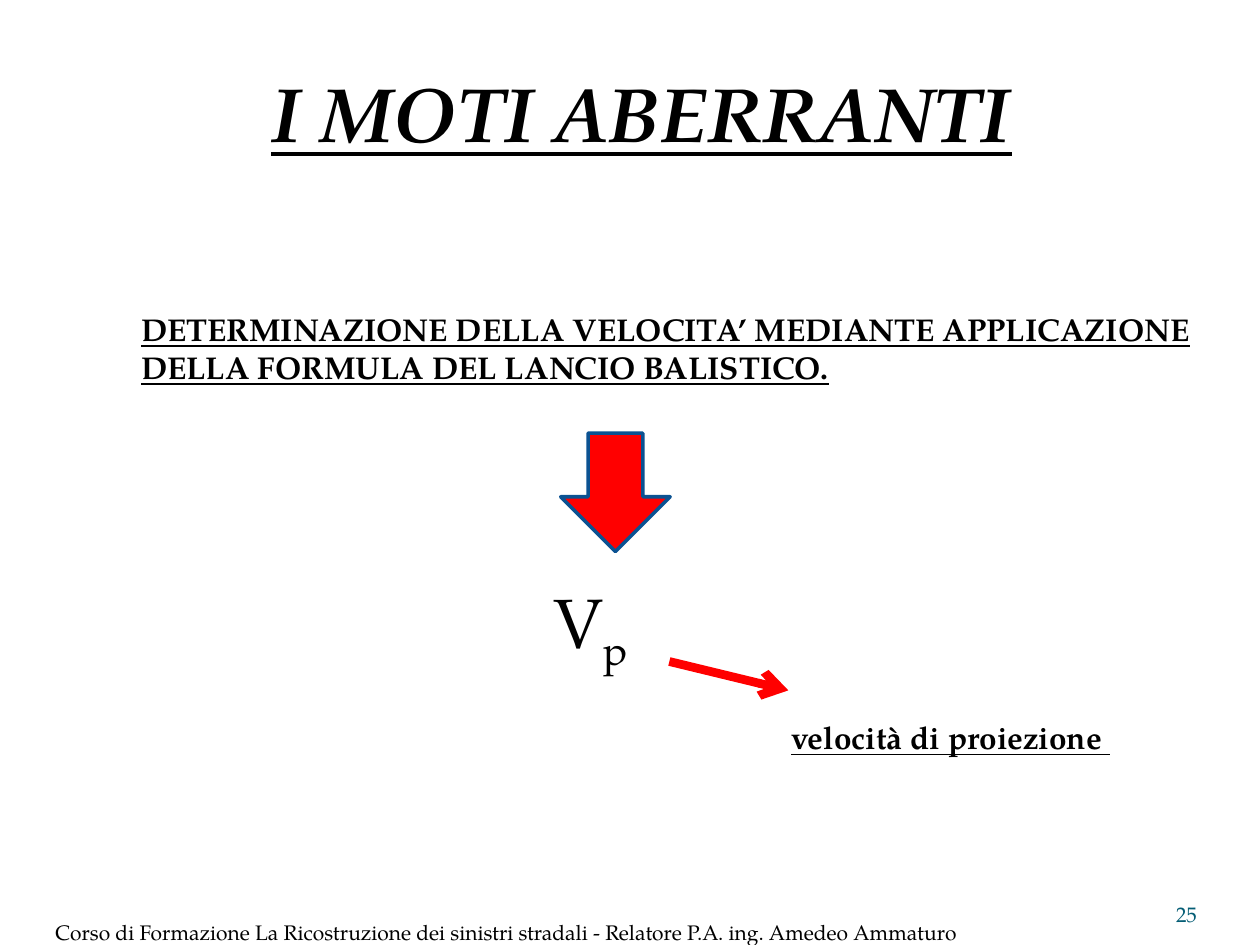
from dataclasses import dataclass

from lxml import etree
from pptx import Presentation
from pptx.dml.color import RGBColor
from pptx.enum.shapes import MSO_CONNECTOR, MSO_SHAPE
from pptx.enum.text import MSO_ANCHOR, MSO_AUTO_SIZE, PP_ALIGN
from pptx.oxml.ns import qn
from pptx.util import Pt

LEFT, CENTER, RIGHT = PP_ALIGN.LEFT, PP_ALIGN.CENTER, PP_ALIGN.RIGHT
TOP, BOTTOM = MSO_ANCHOR.TOP, MSO_ANCHOR.BOTTOM
TITLE_ONLY = 5


@dataclass(frozen=True)
class Theme:
    font: str = "TeX Gyre Pagella"
    black: RGBColor = RGBColor(0x00, 0x00, 0x00)
    red: RGBColor = RGBColor(0xFF, 0x00, 0x00)
    outline: RGBColor = RGBColor(0x0B, 0x52, 0x92)
    number: RGBColor = RGBColor(0x04, 0x5D, 0x75)
    title_size: int = 44
    symbol_size: int = 40
    text_size: int = 18
    footer_size: int = 12


THEME = Theme()


def place(shape, left, top, width, height):
    """Set the position and size of a shape, in points."""
    shape.left, shape.top = Pt(left), Pt(top)
    shape.width, shape.height = Pt(width), Pt(height)


def write_text(shape, text, *, size=THEME.text_size, color=THEME.black,
               bold=False, italic=False, underline=False, align=LEFT,
               anchor=TOP, inset=(7.2, 3.6), wrap=True, subscript=""):
    """Write one formatted paragraph, with an optional subscript."""
    frame = shape.text_frame
    frame.word_wrap = wrap
    frame.auto_size = MSO_AUTO_SIZE.NONE
    frame.vertical_anchor = anchor
    frame.margin_left = frame.margin_right = Pt(inset[0])
    frame.margin_top = frame.margin_bottom = Pt(inset[1])
    paragraph = frame.paragraphs[0]
    paragraph.alignment = align
    for content, baseline in ((text, None), (subscript, "-25000")):
        if not content:
            continue
        run = paragraph.add_run()
        run.text = content
        font = run.font
        font.name, font.size, font.color.rgb = THEME.font, Pt(size), color
        font.bold, font.italic, font.underline = bold, italic, underline
        if baseline:
            run._r.get_or_add_rPr().set("baseline", baseline)


def add_text(slide, text, box, **text_format):
    shape = slide.shapes.add_textbox(*map(Pt, box))
    write_text(shape, text, **text_format)


def add_down_arrow(slide, box):
    shape = slide.shapes.add_shape(MSO_SHAPE.DOWN_ARROW, *map(Pt, box))
    shape.shadow.inherit = False
    shape.fill.solid()
    shape.fill.fore_color.rgb = THEME.red
    shape.line.color.rgb = THEME.outline
    shape.line.width = Pt(2)


def add_pointer(slide, start, end):
    """Draw a straight line with an open arrowhead at its end."""
    connector = slide.shapes.add_connector(
        MSO_CONNECTOR.STRAIGHT, *map(Pt, start + end))
    connector.line.color.rgb = THEME.red
    connector.line.width = Pt(5)
    etree.SubElement(connector.line._get_or_add_ln(), qn("a:tailEnd"), type="arrow")
    etree.SubElement(connector._element.spPr, qn("a:effectLst"))


def main():
    presentation = Presentation()
    presentation.slide_width, presentation.slide_height = Pt(720), Pt(540)
    slide = presentation.slides.add_slide(presentation.slide_layouts[TITLE_ONLY])

    # Title
    title = slide.shapes.title
    place(title, 42.5, 34, 648, 60)
    write_text(title, "I MOTI ABERRANTI", size=THEME.title_size, bold=True,
               italic=True, underline=True, align=CENTER)

    # Method and the speed it leads to
    add_text(slide, "DETERMINAZIONE DELLA VELOCITA’ MEDIANTE APPLICAZIONE "
             "DELLA FORMULA DEL LANCIO BALISTICO.",
             (73.5, 173.5, 621.5, 51), bold=True, underline=True)
    add_down_arrow(slide, (320.4, 247.5, 62.6, 67.7))
    add_text(slide, "V", (309, 327, 101, 55.5), size=THEME.symbol_size,
             subscript="p")

    # Meaning of the symbol
    add_pointer(slide, (382.5, 378), (450.5, 394.5))
    add_text(slide, "velocità di proiezione ", (445, 407, 203, 29),
             bold=True, underline=True, wrap=False)

    # Footer and slide number
    footer_format = dict(size=THEME.footer_size, anchor=BOTTOM, inset=(0, 0))
    add_text(slide, "Corso di Formazione La Ricostruzione dei sinistri stradali"
             " - Relatore P.A. ing. Amedeo Ammaturo",
             (-1, 511, 581, 29), align=CENTER, **footer_format)
    add_text(slide, "25", (624, 500.5, 60, 29), color=THEME.number,
             align=RIGHT, **footer_format)

    presentation.save("out.pptx")


if __name__ == "__main__":
    main()
